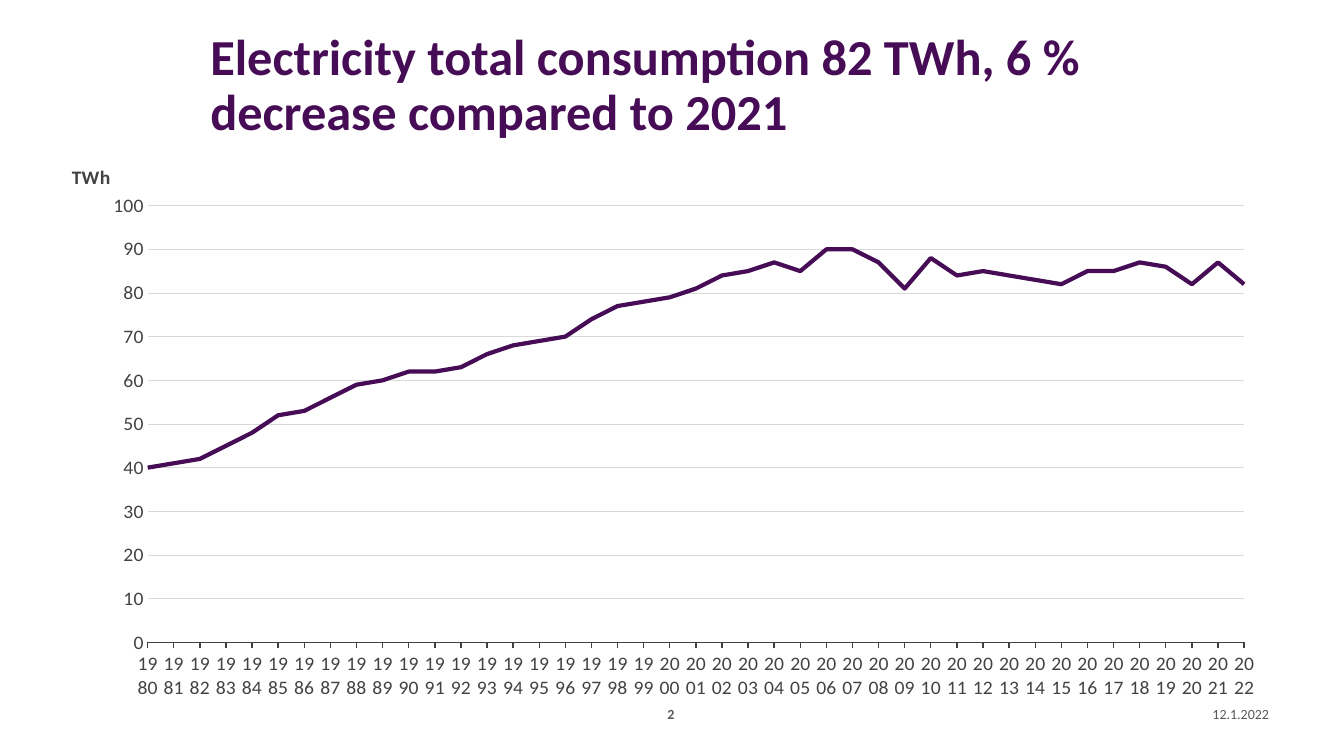
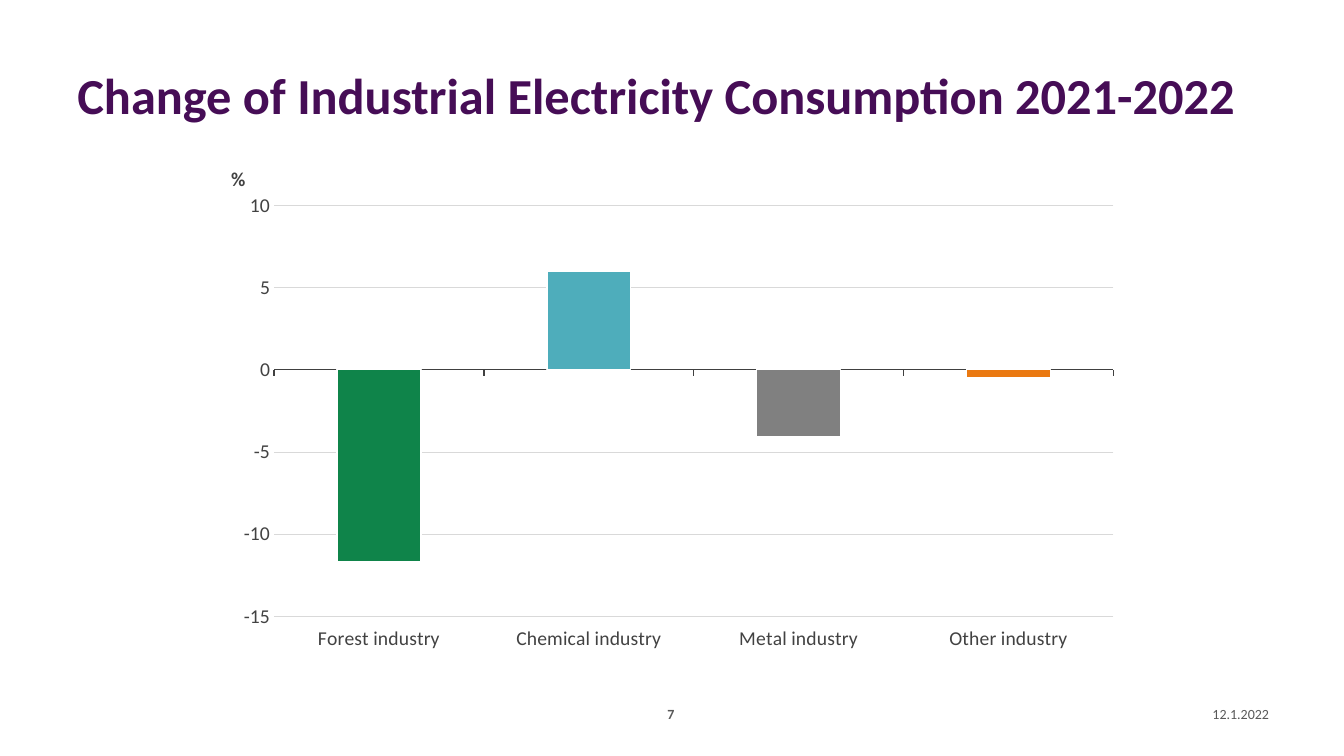
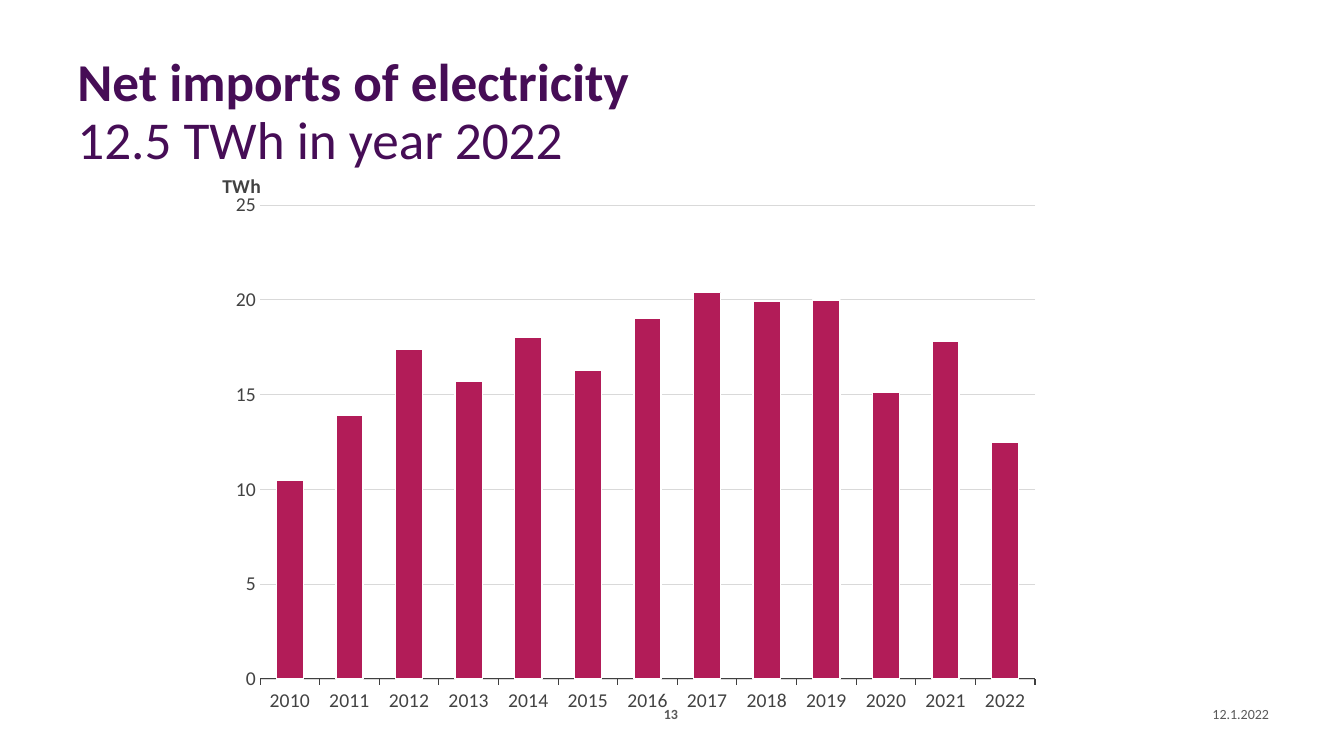
from dataclasses import dataclass

from lxml.etree import SubElement
from pptx import Presentation
from pptx.chart.data import CategoryChartData
from pptx.dml.color import RGBColor
from pptx.enum.chart import XL_CHART_TYPE, XL_MARKER_STYLE, XL_TICK_LABEL_POSITION, XL_TICK_MARK
from pptx.enum.text import MSO_ANCHOR, PP_ALIGN
from pptx.oxml import parse_xml
from pptx.oxml.ns import nsdecls, qn
from pptx.util import Cm, Pt


@dataclass(frozen=True)
class Theme:
    """Colours and type sizes shared by all slides."""

    font: str = "Calibri"
    purple: RGBColor = RGBColor.from_string("460D56")
    green: RGBColor = RGBColor.from_string("0F844A")
    teal: RGBColor = RGBColor.from_string("4EADBB")
    grey: RGBColor = RGBColor.from_string("808080")
    orange: RGBColor = RGBColor.from_string("EA7911")
    crimson: RGBColor = RGBColor.from_string("B21C58")
    white: RGBColor = RGBColor.from_string("FFFFFF")
    black: RGBColor = RGBColor.from_string("000000")
    footer: RGBColor = RGBColor.from_string("595959")
    label: RGBColor = RGBColor.from_string("424242")
    axis: RGBColor = RGBColor.from_string("404040")
    grid: RGBColor = RGBColor.from_string("D9D9D9")
    title_size: int = 36
    large_title_size: int = 38
    axis_size: int = 14
    small_size: int = 10


THEME = Theme()
DATE = "12.1.2022"


def style_font(font, size, color, bold=False):
    """Apply the theme font with a size, colour and weight."""
    font.name = THEME.font
    font.size = Pt(size)
    font.bold = bold
    font.color.rgb = color


def style_line(line, color, width):
    """Give a line a solid colour and a width in points."""
    line.color.rgb = color
    line.width = Pt(width)


def add_text(page, place, spans, size, color, align=PP_ALIGN.LEFT, spacing=1.0):
    """Add a middle-anchored box with one line for each (text, bold) span."""
    box = page.shapes.add_textbox(*map(Cm, place))
    frame = box.text_frame
    frame.word_wrap = True
    frame.vertical_anchor = MSO_ANCHOR.MIDDLE
    para = frame.paragraphs[0]
    para.alignment = align
    para.line_spacing = spacing
    for index, (text, bold) in enumerate(spans):
        if index:
            para.add_line_break()
        span = para.add_run()
        span.text = text
        style_font(span.font, size, color, bold)


def add_page(deck, number, title_place, title_spans, title_size=THEME.title_size):
    """Add a slide with its title, date and page number."""
    page = deck.slides.add_slide(deck.slide_layouts[6])
    add_text(page, title_place, title_spans, title_size, THEME.purple, spacing=0.9)
    add_text(page, (29.41, 17.65, 2.82, 0.69), [(DATE, False)],
             THEME.small_size, THEME.footer, PP_ALIGN.RIGHT)
    add_text(page, (16.15, 17.65, 1.52, 0.69), [(str(number), True)],
             THEME.small_size, THEME.footer, PP_ALIGN.CENTER)
    return page


def manual_layout(**settings):
    """Build a chart layout element from its settings in schema order."""
    layout = parse_xml(f"<c:layout {nsdecls('c')}/>")
    manual = SubElement(layout, qn("c:manualLayout"))
    for name, value in settings.items():
        SubElement(manual, qn(f"c:{name}")).set("val", str(value))
    return layout


def drop_children(parent, tag):
    """Remove the direct children that carry a tag."""
    for child in parent.findall(qn(tag)):
        parent.remove(child)


def set_plot_area(chart, x, y, w, h):
    """Place the inner plot area by fractions of the chart."""
    area = chart.element.xpath(".//c:plotArea")[0]
    drop_children(area, "c:layout")
    area.insert(0, manual_layout(layoutTarget="inner", xMode="edge", yMode="edge",
                                 x=x, y=y, w=w, h=h))


def set_unit(chart, unit, x, y):
    """Write the unit horizontally as the title of the value axis."""
    para = chart.value_axis.axis_title.text_frame.paragraphs[0]
    span = para.add_run()
    span.text = unit
    style_font(span.font, THEME.axis_size, THEME.label, True)
    title = chart.element.xpath(".//c:valAx/c:title")[0]
    title.xpath(".//a:bodyPr")[0].set("rot", "0")
    drop_children(title, "c:layout")
    title.find(qn("c:tx")).addnext(manual_layout(xMode="edge", yMode="edge", x=x, y=y))


def style_axes(chart, scale, number_format, line_width):
    """Style both axes and set the value scale as (low, high, step)."""
    category, value = chart.category_axis, chart.value_axis
    for axis, tick in ((category, XL_TICK_MARK.OUTSIDE), (value, XL_TICK_MARK.NONE)):
        axis.major_tick_mark = tick
        axis.minor_tick_mark = XL_TICK_MARK.NONE
        style_font(axis.tick_labels.font, THEME.axis_size, THEME.label)
    category.has_major_gridlines = False
    category.tick_label_position = XL_TICK_LABEL_POSITION.LOW
    style_line(category.format.line, THEME.axis, line_width)
    chart.element.xpath(".//c:catAx/c:txPr/a:bodyPr")[0].set("rot", "0")
    value.minimum_scale, value.maximum_scale, value.major_unit = scale
    value.tick_labels.number_format = number_format
    value.tick_labels.number_format_is_linked = False
    value.format.line.fill.background()
    value.has_major_gridlines = True
    style_line(value.major_gridlines.format.line, THEME.grid, 0.5)


def add_chart(page, kind, place, plot, unit, scale, categories, values,
              number_format="General", line_width=1):
    """Add a one-series chart and return it."""
    data = CategoryChartData()
    data.categories = categories
    data.add_series("Series 1", values)
    chart = page.shapes.add_chart(kind, *map(Cm, place), data).chart
    chart.has_title = False
    chart.has_legend = False
    style_font(chart.font, THEME.small_size, THEME.black)
    chart.plots[0].vary_by_categories = False
    style_axes(chart, scale, number_format, line_width)
    set_unit(chart, *unit)
    set_plot_area(chart, *plot)
    return chart


def paint_line(chart, color):
    """Draw the series as a plain line from one plot edge to the other."""
    series = chart.plots[0].series[0]
    series.smooth = False
    series.marker.style = XL_MARKER_STYLE.NONE
    style_line(series.format.line, color, 3)
    axis = chart.element.xpath(".//c:valAx")[0]
    drop_children(axis, "c:crossBetween")
    crossing = parse_xml(f'<c:crossBetween {nsdecls("c")} val="midCat"/>')
    axis.find(qn("c:crosses")).addnext(crossing)


def paint_bars(chart, gap, color, point_colors=()):
    """Fill the bars with one colour, or the first ones with their own."""
    plot = chart.plots[0]
    plot.gap_width = gap
    series = plot.series[0]
    series.invert_if_negative = False
    targets = [(series, color)]
    targets += [(series.points[i], tone) for i, tone in enumerate(point_colors)]
    for target, tone in targets:
        target.format.fill.solid()
        target.format.fill.fore_color.rgb = tone
        style_line(target.format.line, THEME.white, 1)


def years(first, last):
    """List the years of a range as labels."""
    return [str(year) for year in range(first, last + 1)]


def add_consumption(deck):
    """Add the slide on total consumption."""
    page = add_page(deck, 2, (5.05, 0.76, 26.34, 2.84), [
        ("Electricity total consumption 82 TWh, 6 % decrease compared to 2021", True)])
    values = (40, 41, 42, 45, 48, 52, 53, 56, 59, 60, 62, 62, 63, 66, 68,
              69, 70, 74, 77, 78, 79, 81, 84, 85, 87, 85, 90, 90, 87, 81,
              88, 84, 85, 84, 83, 82, 85, 85, 87, 86, 82, 87, 82)
    chart = add_chart(page, XL_CHART_TYPE.LINE, (1.63, 3.78, 30.3, 13.84),
                      (0.069, 0.104, 0.912, 0.816), ("TWh", 0.003, 0.02),
                      (0, 100, 10), years(1980, 2022), values, number_format="0")
    paint_line(chart, THEME.purple)


def add_industry(deck):
    """Add the slide on industrial consumption."""
    page = add_page(deck, 7, (1.7, 1.02, 30.81, 2.9), [
        ("Change of Industrial Electricity Consumption 2021-2022", True)])
    industries = [f"{name} industry" for name in ("Forest", "Chemical", "Metal", "Other")]
    chart = add_chart(page, XL_CHART_TYPE.COLUMN_CLUSTERED, (5.18, 3.91, 23.04, 13.74),
                      (0.075, 0.092, 0.918, 0.754), ("%", 0.024, 0.012),
                      (-15, 10, 5), industries, (-11.7, 6, -4.1, -0.5))
    paint_bars(chart, 150, THEME.orange, (THEME.green, THEME.teal, THEME.grey))


def add_imports(deck):
    """Add the slide on net imports."""
    page = add_page(deck, 13, (1.7, 1.02, 26.34, 3.68), [
        ("Net imports of electricity", True), ("12.5 TWh in year 2022", False)],
        THEME.large_title_size)
    values = (10.5, 13.9, 17.4, 15.7, 18, 16.3, 19, 20.4, 19.9, 20, 15.1, 17.8, 12.5)
    chart = add_chart(page, XL_CHART_TYPE.COLUMN_CLUSTERED, (5.41, 4.06, 20.8, 14.2),
                      (0.055, 0.078, 0.939, 0.841), ("TWh", 0.005, 0.014),
                      (0, 25, 5), years(2010, 2022), values, line_width=0.75)
    paint_bars(chart, 120, THEME.crimson)


def main():
    """Build and save the deck."""
    deck = Presentation()
    deck.slide_width, deck.slide_height = Cm(33.87), Cm(19.05)
    add_consumption(deck)
    add_industry(deck)
    add_imports(deck)
    deck.save("out.pptx")


if __name__ == "__main__":
    main()
